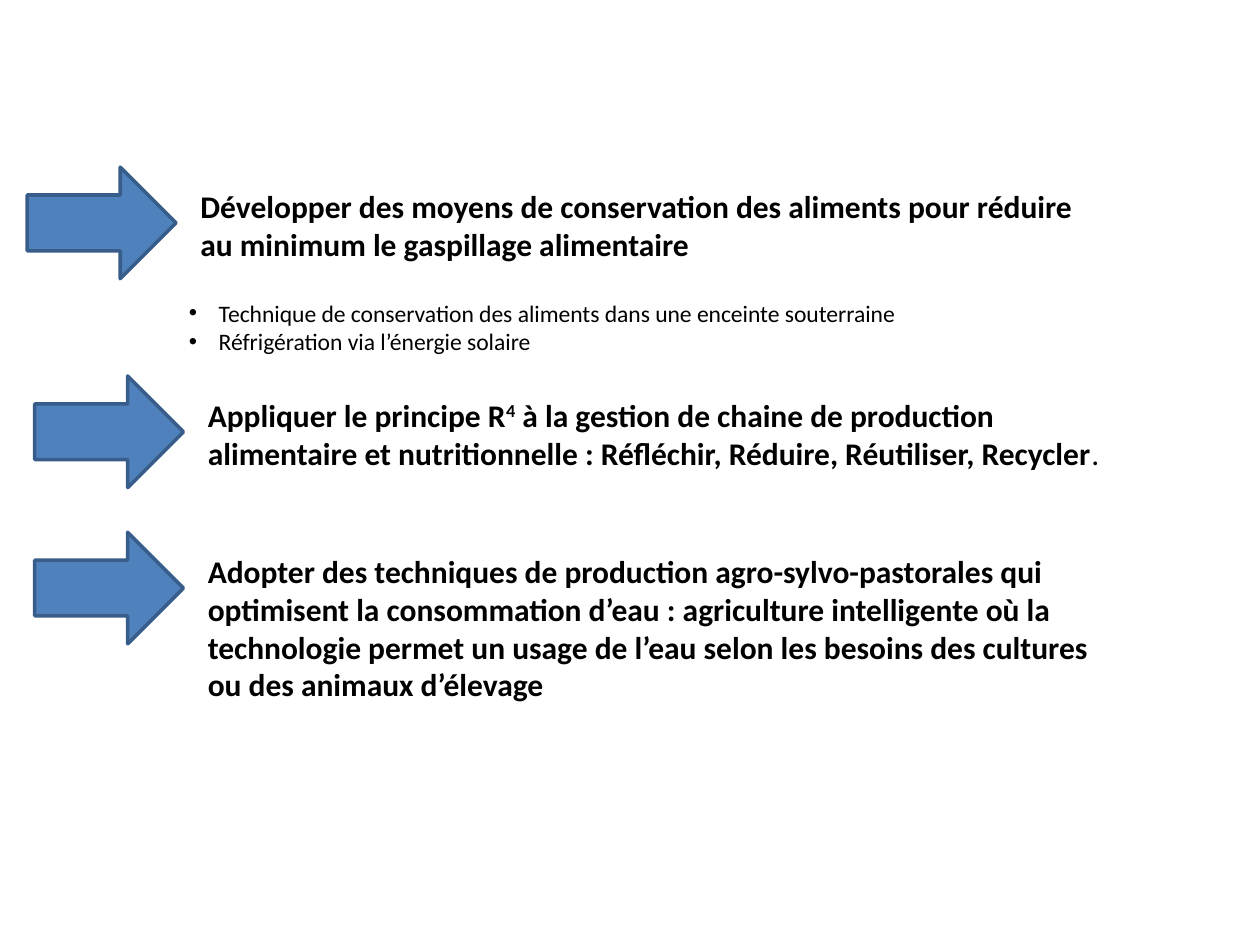
from dataclasses import dataclass

from lxml.etree import SubElement
from pptx import Presentation
from pptx.dml.color import RGBColor
from pptx.enum.shapes import MSO_SHAPE as Shape
from pptx.enum.text import MSO_ANCHOR as Anchor, MSO_AUTO_SIZE as AutoSize
from pptx.oxml.ns import qn
from pptx.slide import Slide
from pptx.util import Cm, Pt

BLACK = RGBColor(0x00, 0x00, 0x00)
BLUE = RGBColor(0x4F, 0x81, 0xBD)
DARK_BLUE = RGBColor(0x38, 0x5D, 0x8A)


def add_text(paragraph, text, font="Calibri", size=18, color=BLACK, bold=False, raised=0):
    run = paragraph.add_run()
    run.text = text
    run.font.name = font
    run.font.size = Pt(size)
    run.font.color.rgb = color
    run.font.bold = bold
    if raised:
        run.font._element.set("baseline", str(raised * 1000))


@dataclass
class ActionSlide:
    slide: Slide
    font: str = "Calibri"
    heading_size: float = 18
    detail_size: float = 13.5
    text_width: float = 18.6

    def arrow(self, left, top):
        arrow = self.slide.shapes.add_shape(
            Shape.RIGHT_ARROW, Cm(left), Cm(top), Cm(3), Cm(2.25))
        arrow.shadow.inherit = False
        arrow.fill.solid()
        arrow.fill.fore_color.rgb = BLUE
        arrow.line.color.rgb = DARK_BLUE
        arrow.line.width = Pt(2)

    def text_frame(self, left, top, width, height):
        frame = self.slide.shapes.add_textbox(
            Cm(left), Cm(top), Cm(width), Cm(height)).text_frame
        frame.word_wrap = True
        frame.auto_size = AutoSize.SHAPE_TO_FIT_TEXT
        frame.vertical_anchor = Anchor.TOP
        frame.margin_left = frame.margin_right = Cm(0.19)
        frame.margin_top = frame.margin_bottom = Cm(0.1)
        return frame

    def action(self, left, top, height, parts):
        self.arrow(left, top)
        frame = self.text_frame(left + 3.3, top + 0.3, self.text_width, height)
        for text, style in parts:
            add_text(frame.paragraphs[0], text, font=self.font,
                     size=self.heading_size, **{"bold": True, **style})

    def bullets(self, left, top, width, height, techniques):
        frame = self.text_frame(left, top, width, height)
        for index, technique in enumerate(techniques):
            paragraph = frame.add_paragraph() if index else frame.paragraphs[0]
            paragraph.level = 1
            properties = paragraph._p.get_or_add_pPr()
            properties.set("marL", str(Cm(0.97)))
            properties.set("indent", str(-Cm(0.6)))
            SubElement(properties, qn("a:buFont"), typeface="Arial")
            SubElement(properties, qn("a:buChar"), char="•")
            add_text(paragraph, technique, font=self.font, size=self.detail_size)


def main():
    presentation = Presentation()
    presentation.slide_width = Cm(25.4)
    presentation.slide_height = Cm(19.05)
    blank_layout = presentation.slide_layouts[6]
    actions = ActionSlide(presentation.slides.add_slide(blank_layout))

    actions.action(0.55, 3.37, 1.73, [
        ("Développer des moyens de conservation des aliments pour réduire "
         "au minimum le gaspillage alimentaire", {}),
    ])
    actions.bullets(3.25, 5.92, 16.94, 1.35, [
        "Technique de conservation des aliments dans une enceinte souterraine",
        "Réfrigération via l’énergie solaire",
    ])
    actions.action(0.7, 7.58, 1.73, [
        ("Appliquer le principe R", {}),
        ("4", {"raised": 30}),
        (" à la gestion de chaine de production alimentaire et nutritionnelle : "
         "Réfléchir, Réduire, Réutiliser, Recycler", {}),
        (".", {"bold": False}),
    ])
    actions.action(0.7, 10.73, 3.28, [
        ("Adopter des techniques de production agro-sylvo-pastorales qui "
         "optimisent la consommation d’eau : agriculture intelligente où la "
         "technologie permet un usage de l’eau selon les besoins des cultures "
         "ou des animaux d’élevage", {}),
    ])
    presentation.save("out.pptx")


if __name__ == "__main__":
    main()
